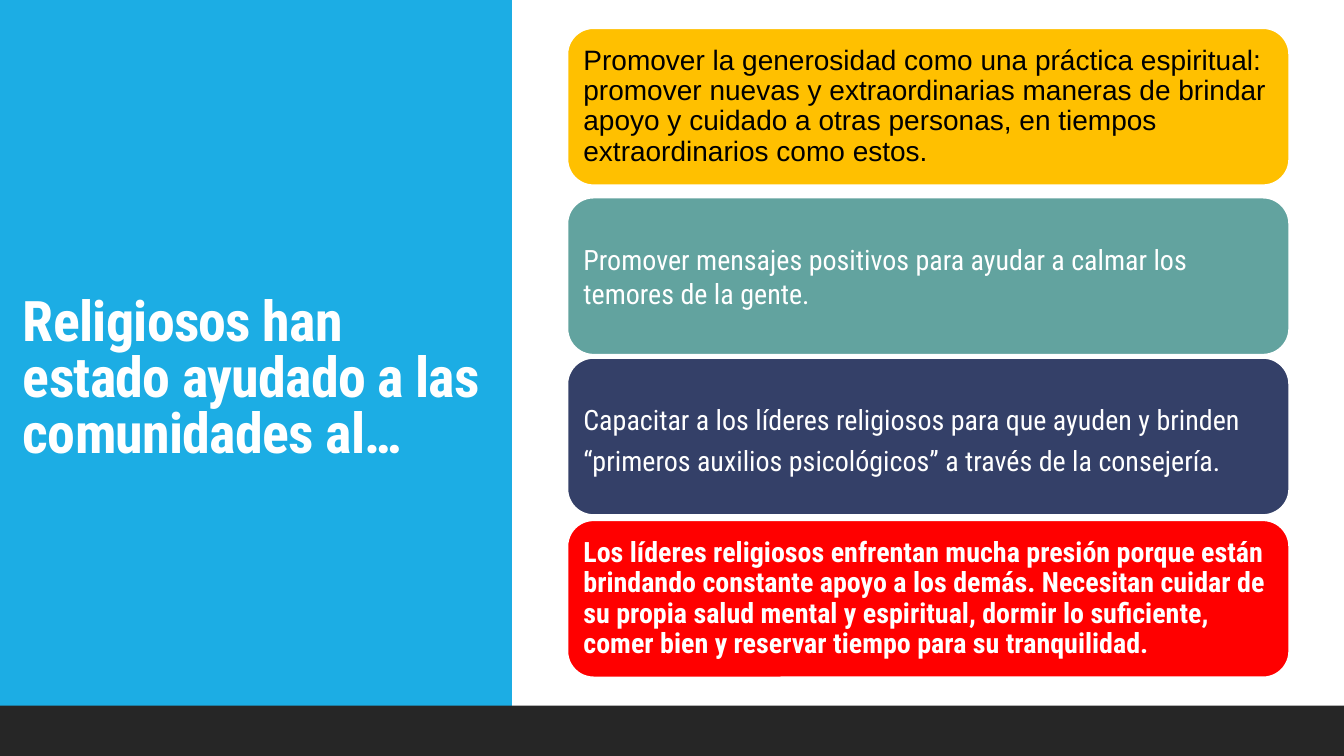
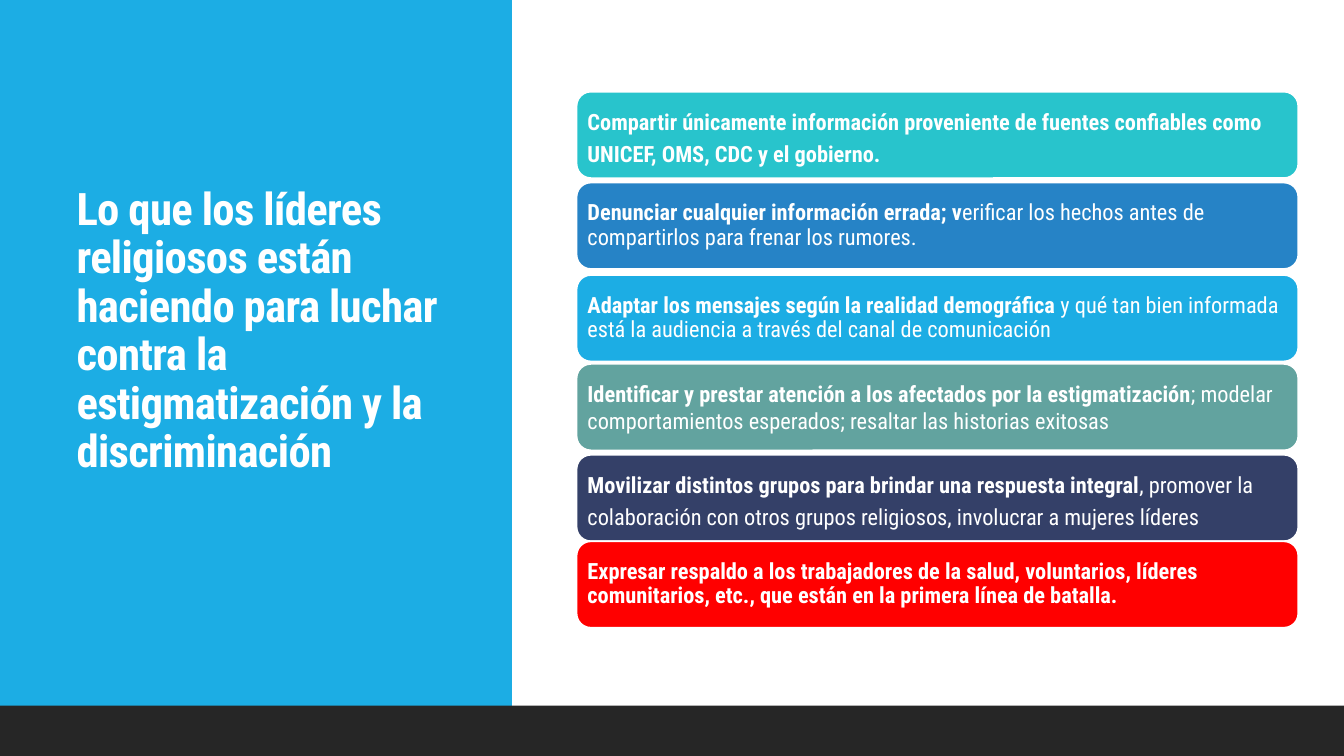
import dataclasses

import pptx
import pptx.dml.color
import pptx.enum.shapes
import pptx.enum.text
import pptx.util

Cm, Pt = pptx.util.Cm, pptx.util.Pt
SHAPE = pptx.enum.shapes.MSO_SHAPE
COLORS = {
    "sky": "1CADE4", "footer": "262626", "white": "FFFFFF", "black": "000000",
    "red": "FF0000", "amber": "FFC000", "sage": "62A39F", "navy": "344068",
    "turquoise": "28C4CC", "blue": "2683C6",
}
FONT = "Roboto Condensed"
SLIDE_W, SLIDE_H = 33.87, 19.05
PANEL_W, FOOTER_H = 12.9, 1.27


@dataclasses.dataclass
class Card:
    """One message: bold lead, plain remainder and look."""
    top: float
    fill: str
    spacing: float
    lead: str = ""
    rest: str = ""
    font: str = FONT
    color: str = "white"


def rgb(name):
    """Return the named colour."""
    return pptx.dml.color.RGBColor.from_string(COLORS[name])


def add_block(s, kind, box, fill):
    """Add a filled shape without outline or shadow."""
    sp = s.shapes.add_shape(kind, *map(Cm, box))
    sp.shadow.inherit = False
    sp.fill.solid()
    sp.fill.fore_color.rgb = rgb(fill)
    sp.line.fill.background()
    return sp


def style_paragraph(p, font, size, color, spacing):
    """Set the font and line spacing of a left-aligned paragraph."""
    p.alignment = pptx.enum.text.PP_ALIGN.LEFT
    p.line_spacing = spacing
    p.font.name = font
    p.font.size = Pt(size)
    p.font.color.rgb = rgb(color)


def add_title(s, box, text, size, spacing):
    """Add the bold white title, centred vertically in its box."""
    tf = s.shapes.add_textbox(*map(Cm, box)).text_frame
    tf.word_wrap = True
    tf.vertical_anchor = pptx.enum.text.MSO_ANCHOR.MIDDLE
    p = tf.paragraphs[0]
    style_paragraph(p, FONT, size, "white", spacing)
    p.font.bold = True
    r = p.add_run()
    r.text = text
    r._r.get_or_add_rPr().set("spc", "-50")


def add_card(s, box, card, size, inset):
    """Add a rounded card holding its message."""
    sp = add_block(s, SHAPE.ROUNDED_RECTANGLE, box, card.fill)
    sp.line.color.rgb = rgb("white")
    sp.line.width = Pt(1.25)
    tf = sp.text_frame
    tf.word_wrap = True
    tf.vertical_anchor = pptx.enum.text.MSO_ANCHOR.MIDDLE
    tf.margin_left = tf.margin_right = Cm(inset)
    tf.margin_top = tf.margin_bottom = Cm(inset)
    p = tf.paragraphs[0]
    style_paragraph(p, card.font, size, card.color, card.spacing)
    for text, bold in ((card.lead, True), (card.rest, False)):
        if text:
            r = p.add_run()
            r.text = text
            r.font.bold = bold


def add_cards(s, box, cards, size, inset):
    """Stack cards in a column given as left, width and card height."""
    left, width, height = box
    for card in cards:
        add_card(s, (left, card.top, width, height), card, size, inset)


def add_slide(prs):
    """Add a blank slide with the side panel and footer band."""
    s = prs.slides.add_slide(prs.slide_layouts[6])
    add_block(s, SHAPE.RECTANGLE, (0, 0, PANEL_W, SLIDE_H), "sky")
    add_block(s, SHAPE.RECTANGLE,
              (0, SLIDE_H - FOOTER_H, SLIDE_W, FOOTER_H), "footer")
    return s


def build_support(prs):
    """Build the slide on support for communities."""
    s = add_slide(prs)
    add_title(s, (0.33, 7.24, 12.22, 4.72),
              "Religiosos han estado ayudado a las comunidades al…", 40, Pt(40))
    cards = [
        Card(0.71, "amber", 0.9, font="Arial", color="black",
             rest="Promover la generosidad como una práctica espiritual: promover "
                  "nuevas y extraordinarias maneras de brindar apoyo y cuidado a "
                  "otras personas, en tiempos extraordinarios como estos."),
        Card(4.98, "sage", 1.0,
             rest="Promover mensajes positivos para ayudar a calmar los temores "
                  "de la gente."),
        Card(9.02, "navy", 1.2,
             rest="Capacitar a los líderes religiosos para que ayuden y brinden "
                  "“primeros auxilios psicológicos” a través de la consejería."),
        Card(13.11, "red", 0.9,
             "Los líderes religiosos enfrentan mucha presión porque están "
             "brindando constante apoyo a los demás. Necesitan cuidar de su "
             "propia salud mental y espiritual, dormir lo suficiente, comer bien "
             "y reservar tiempo para su tranquilidad."),
    ]
    add_cards(s, (14.3, 18.19, 3.96), cards, 20, 0.21)


def build_stigma(prs):
    """Build the slide on stigma and discrimination."""
    s = add_slide(prs)
    add_title(s, (1.68, 4.72, 10.39, 7.29),
              "Lo que los líderes religiosos están haciendo para luchar contra la "
              "estigmatización y la discriminación", 32, 0.9)
    cards = [
        Card(2.31, "turquoise", 1.2,
             "Compartir únicamente información proveniente de fuentes confiables "
             "como UNICEF, OMS, CDC y el gobierno."),
        Card(4.6, "blue", 0.9, "Denunciar cualquier información errada; v",
             "erificar los hechos antes de compartirlos para frenar los rumores."),
        Card(6.93, "sky", 0.9,
             "Adaptar los mensajes según la realidad demográfica ",
             "y qué tan bien informada está la audiencia a través del canal de "
             "comunicación"),
        Card(9.17, "sage", 1.0,
             "Identificar y prestar atención a los afectados por la estigmatización",
             "; modelar comportamientos esperados; resaltar las historias exitosas"),
        Card(11.46, "navy", 1.2,
             "Movilizar distintos grupos para brindar una respuesta integral",
             ", promover la colaboración con otros grupos religiosos, involucrar a "
             "mujeres líderes"),
        Card(13.64, "red", 0.9,
             "Expresar respaldo a los trabajadores de la salud, voluntarios, "
             "líderes comunitarios, etc., que están en la primera línea de batalla."),
    ]
    add_cards(s, (14.53, 18.19, 2.18), cards, 16, 0.17)


def main():
    """Build and save the presentation."""
    prs = pptx.Presentation()
    prs.slide_width, prs.slide_height = Cm(SLIDE_W), Cm(SLIDE_H)
    build_support(prs)
    build_stigma(prs)
    prs.save("out.pptx")


if __name__ == "__main__":
    main()
